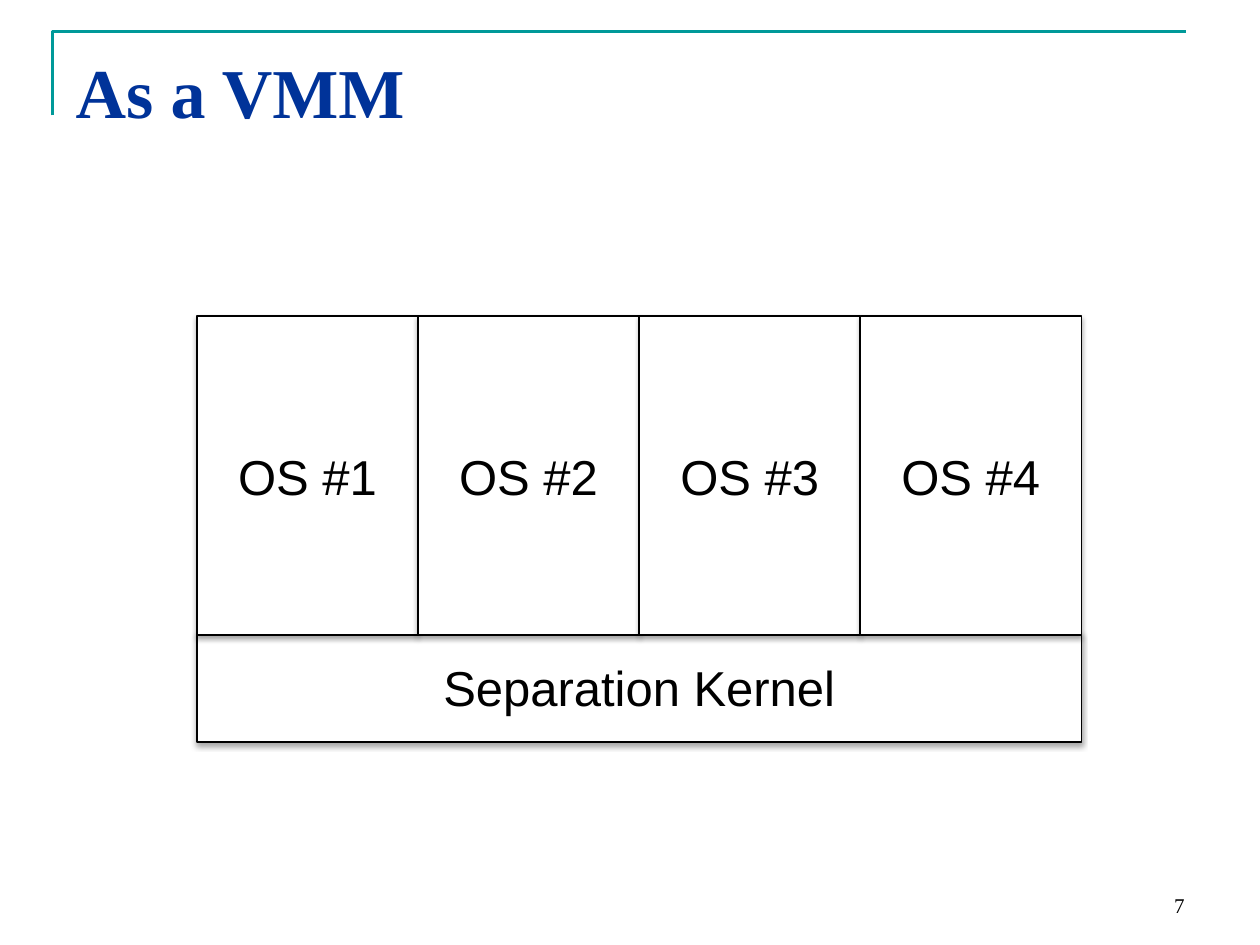
"""Build the slide that shows a separation kernel used as a VMM."""
from lxml.etree import SubElement
from pptx import Presentation
from pptx.dml.color import RGBColor
from pptx.enum.shapes import MSO_SHAPE
from pptx.enum.text import MSO_ANCHOR, PP_ALIGN
from pptx.oxml.ns import qn
from pptx.util import Pt

HUES = {"ink": "000000", "paper": "FFFFFF", "title": "003399", "rule": "009999"}
SERIF, SANS = "Times New Roman", "Arial"


def hue(name):
    return RGBColor.from_string(HUES[name])


def write(shape, text, size, font=SERIF, color="ink", bold=False,
          align=PP_ALIGN.LEFT, anchor=MSO_ANCHOR.BOTTOM):
    frame = shape.text_frame
    frame.word_wrap = True
    frame.vertical_anchor = anchor
    para = frame.paragraphs[0]
    para.alignment = align
    run = para.add_run()
    run.text = text
    run.font.size = Pt(size)
    run.font.name = font
    run.font.bold = bold
    run.font.color.rgb = hue(color)
    return frame


def shade(shape):
    shape.shadow.inherit = False
    effects = shape.element.spPr.find(qn("a:effectLst"))
    outer = SubElement(effects, qn("a:outerShdw"), blurRad=str(Pt(3.1)),
                       dist=str(Pt(1.8)), dir="5400000", rotWithShape="0")
    tint = SubElement(outer, qn("a:srgbClr"), val=HUES["ink"])
    SubElement(tint, qn("a:alpha"), val="35000")


def block(slide, text, left, top, width, height):
    box = slide.shapes.add_shape(MSO_SHAPE.RECTANGLE, Pt(left), Pt(top),
                                 Pt(width), Pt(height))
    box.fill.solid()
    box.fill.fore_color.rgb = hue("paper")
    box.line.color.rgb = hue("ink")
    box.line.width = Pt(0.75)
    shade(box)
    write(box, text, 28, font=SANS, align=PP_ALIGN.CENTER,
          anchor=MSO_ANCHOR.MIDDLE)


def corner(slide):
    pen = slide.shapes.build_freeform(Pt(30), Pt(66))
    pen.add_line_segments([(Pt(30), Pt(18)), (Pt(678), Pt(18))], close=False)
    rule = pen.convert_to_shape()
    rule.fill.background()
    rule.line.color.rgb = hue("rule")
    rule.line.width = Pt(1.5)
    rule.shadow.inherit = False


def head(slide, text):
    title = slide.shapes.title
    title.left, title.top = Pt(36), Pt(21.6)
    title.width, title.height = Pt(552), Pt(56.4)
    frame = write(title, text, 40, color="title", bold=True)
    frame.margin_bottom = Pt(2)


def number(slide, text):
    box = slide.shapes.add_textbox(Pt(516), Pt(504), Pt(168), Pt(24))
    write(box, text, 12, align=PP_ALIGN.RIGHT)


def main():
    deck = Presentation()
    deck.slide_width, deck.slide_height = Pt(720), Pt(540)
    slide = deck.slides.add_slide(deck.slide_layouts[5])
    corner(slide)
    head(slide, "As a VMM")
    number(slide, "7")
    left, count, step = 112.5, 4, 126.35
    block(slide, "Separation Kernel", left, 361.5, count * step, 62.5)
    for i in range(count):
        block(slide, f"OS #{i + 1}", left + i * step, 180.5, step, 182.3)
    deck.save("out.pptx")


if __name__ == "__main__":
    main()
